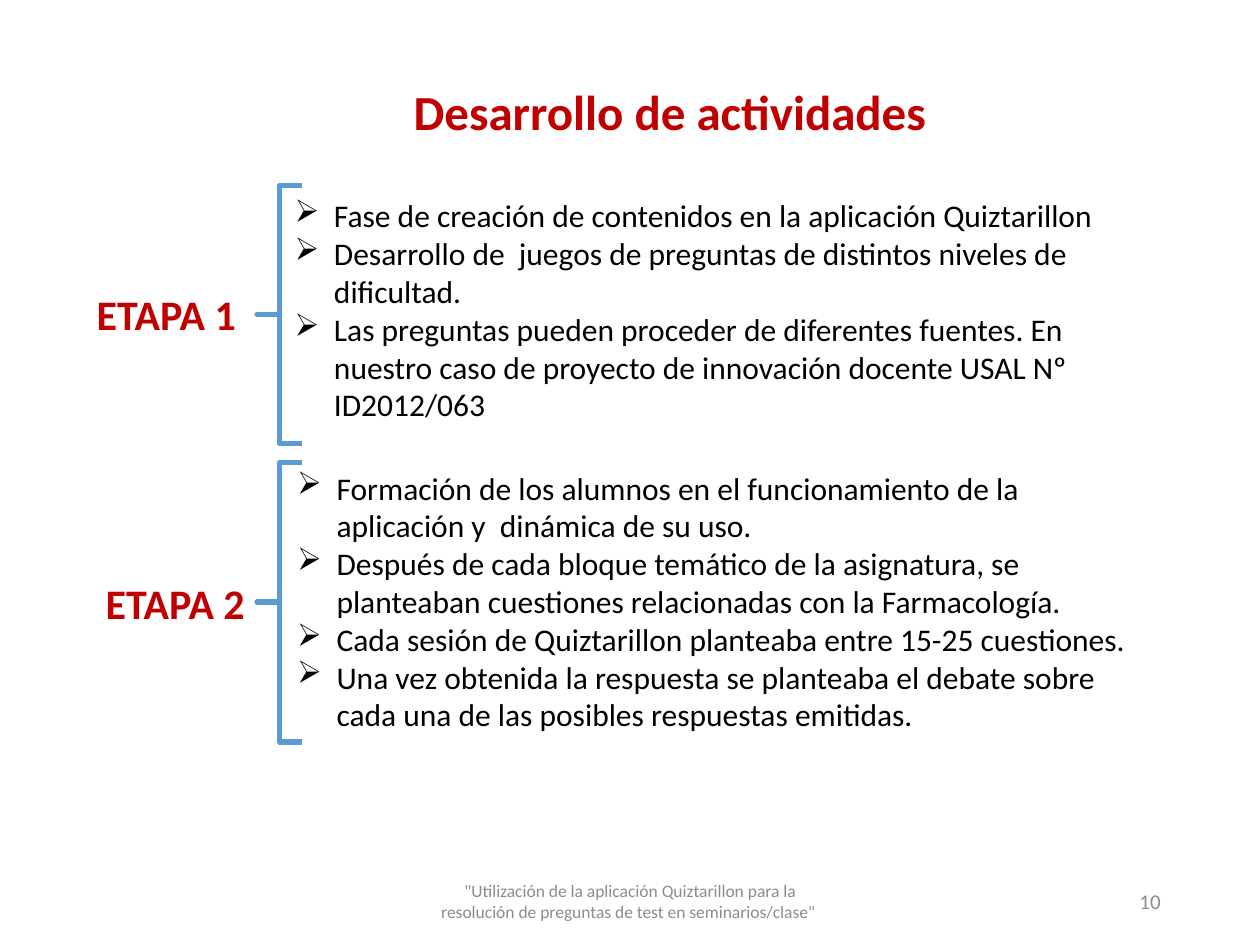
from dataclasses import dataclass

import lxml.etree
import pptx
import pptx.dml.color
import pptx.enum.shapes
import pptx.enum.text
import pptx.oxml.ns
import pptx.util

Pt = pptx.util.Pt
RGBColor = pptx.dml.color.RGBColor
ALIGN = pptx.enum.text.PP_ALIGN
ANCHOR = pptx.enum.text.MSO_ANCHOR


@dataclass(frozen=True)
class Theme:
    font: str = "Calibri"
    accent: RGBColor = RGBColor(0xC0, 0x00, 0x00)
    body: RGBColor = RGBColor(0x00, 0x00, 0x00)
    muted: RGBColor = RGBColor(0x8C, 0x8C, 0x8C)
    brace: RGBColor = RGBColor(0x5B, 0x9B, 0xD5)
    title_size: int = 28
    stage_size: int = 24
    body_size: int = 18
    number_size: int = 12
    footer_size: int = 10


THEME = Theme()
BULLET_INDENT = 22.5
BRACE_LEFT, BRACE_WIDTH = 146.9, 25.9

# Each stage: label, label box, brace top and height, list box, list items
STAGES = [
    ("ETAPA 1", (48.2, 161.3, 94.3, 36), (105.8, 147.6), (161.3, 108.7, 480.2, 138.2), [
        "Fase de creación de contenidos en la aplicación Quiztarillon",
        "Desarrollo de  juegos de preguntas de distintos niveles de dificultad.",
        "Las preguntas pueden proceder de diferentes fuentes. En nuestro caso de "
        "proyecto de innovación docente USAL Nº ID2012/063",
    ]),
    ("ETAPA 2", (53.3, 326.2, 94.3, 36), (264.2, 159.8), (162.7, 264.2, 497.5, 159.8), [
        "Formación de los alumnos en el funcionamiento de la aplicación y  dinámica de su uso.",
        "Después de cada bloque temático de la asignatura, se planteaban cuestiones "
        "relacionadas con la Farmacología.",
        "Cada sesión de Quiztarillon planteaba entre 15-25 cuestiones.",
        "Una vez obtenida la respuesta se planteaba el debate sobre cada una de las "
        "posibles respuestas emitidas.",
    ]),
]


def add_bullet(paragraph):
    properties = paragraph._p.get_or_add_pPr()
    properties.set("marL", str(Pt(BULLET_INDENT)))
    properties.set("indent", str(-Pt(BULLET_INDENT)))
    bullet = lxml.etree.SubElement(properties, pptx.oxml.ns.qn("a:buChar"))
    bullet.set("char", "➢")


def add_text(slide, box, *lines, size, color, bold=False, align=ALIGN.LEFT,
             anchor=ANCHOR.TOP, wrap=True, bullets=False):
    """Add a text box with one paragraph per line; box is left, top, width, height."""
    frame = slide.shapes.add_textbox(*map(Pt, box)).text_frame
    frame.word_wrap = wrap
    frame.vertical_anchor = anchor
    for index, line in enumerate(lines):
        paragraph = frame.add_paragraph() if index else frame.paragraphs[0]
        if bullets:
            add_bullet(paragraph)
        paragraph.text = line
        paragraph.alignment = align
        paragraph.font.name = THEME.font
        paragraph.font.size = Pt(size)
        paragraph.font.bold = bold
        paragraph.font.color.rgb = color


def add_brace(slide, top, height):
    shape = slide.shapes.add_shape(
        pptx.enum.shapes.MSO_SHAPE.LEFT_BRACE,
        Pt(BRACE_LEFT), Pt(top), Pt(BRACE_WIDTH), Pt(height))
    shape.adjustments[0] = 0
    shape.adjustments[1] = 0.5
    shape.shadow.inherit = False
    shape.fill.background()
    shape.line.color.rgb = THEME.brace
    shape.line.width = Pt(3)


def add_stage(slide, label, label_box, brace_span, list_box, items):
    add_text(slide, list_box, *items, size=THEME.body_size, color=THEME.body, bullets=True)
    add_text(slide, label_box, label, size=THEME.stage_size, color=THEME.accent,
             bold=True, wrap=False)
    add_brace(slide, *brace_span)


def add_footer(slide):
    add_text(slide, (238.3, 500.4, 243.4, 28.8),
             '"Utilización de la aplicación Quiztarillon para la resolución de '
             'preguntas de test en seminarios/clase" ',
             size=THEME.footer_size, color=THEME.muted, align=ALIGN.CENTER,
             anchor=ANCHOR.MIDDLE)
    add_text(slide, (508.3, 500.4, 162, 28.8), "10", size=THEME.number_size,
             color=THEME.muted, align=ALIGN.RIGHT, anchor=ANCHOR.MIDDLE)


def main():
    presentation = pptx.Presentation()
    presentation.slide_width, presentation.slide_height = Pt(720), Pt(540)
    slide = presentation.slides.add_slide(presentation.slide_layouts[6])
    add_text(slide, (133.2, 43.2, 499, 41), "Desarrollo de actividades",
             size=THEME.title_size, color=THEME.accent, bold=True, align=ALIGN.CENTER)
    for stage in STAGES:
        add_stage(slide, *stage)
    add_footer(slide)
    presentation.save("out.pptx")


if __name__ == "__main__":
    main()
